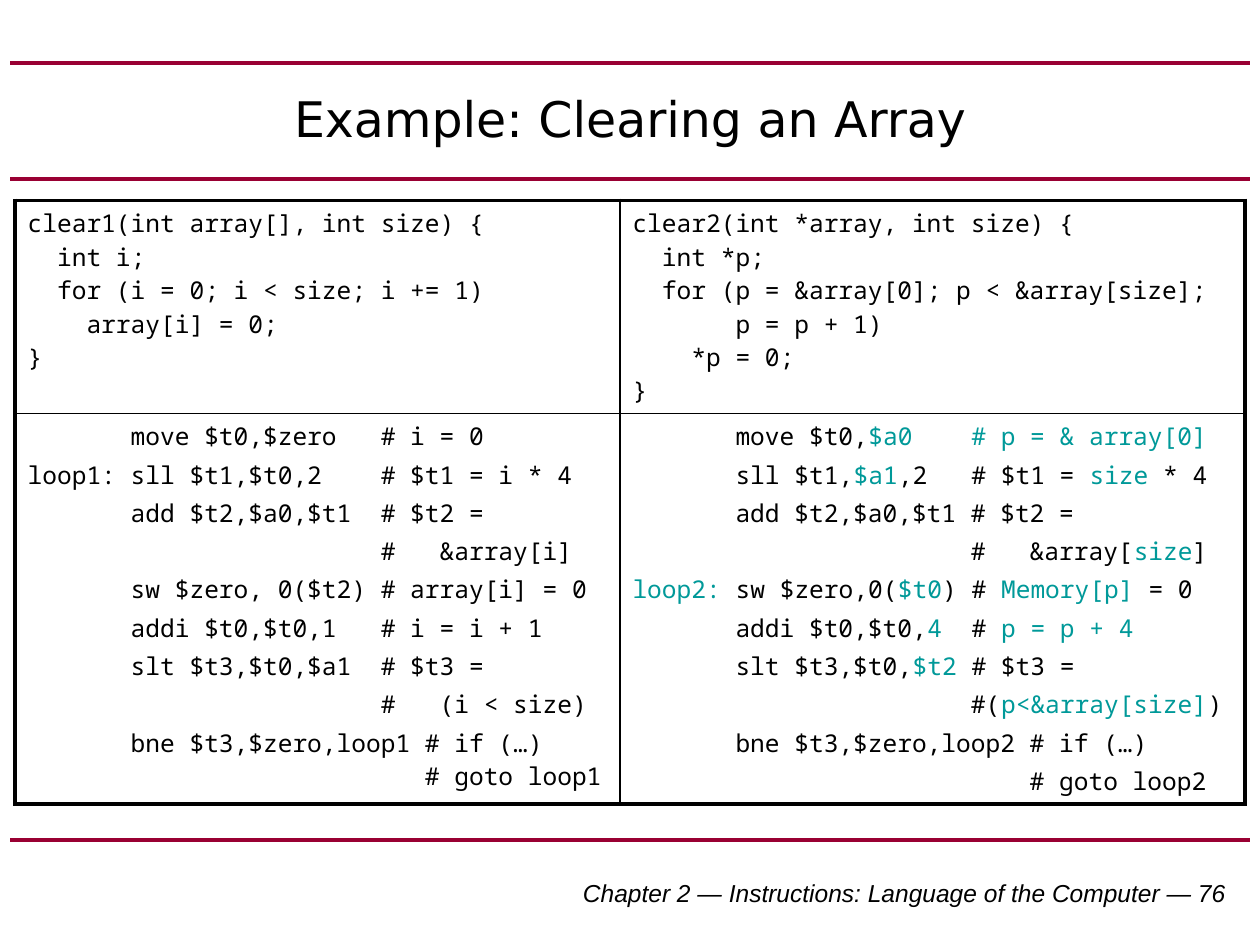
from dataclasses import dataclass

from lxml.etree import SubElement
from pptx import Presentation
from pptx.dml.color import RGBColor
from pptx.enum.shapes import MSO_CONNECTOR as Connector
from pptx.enum.text import MSO_ANCHOR as Anchor, PP_ALIGN as Align
from pptx.oxml.ns import qn
from pptx.util import Inches, Pt

BLACK = RGBColor(0x00, 0x00, 0x00)
WHITE = RGBColor(0xFF, 0xFF, 0xFF)
CRIMSON = RGBColor(0x99, 0x00, 0x33)
TEAL = RGBColor(0x00, 0x99, 0x99)

THICK, THIN = Pt(2.25), Pt(1)
MARK = "`"
BREAK = "\v"
CODE_FORMAT = {"name": "Noto Sans Mono", "size": Pt(14)}
RULE_HEIGHTS = (0.5, 1.42, 6.67)
COLUMN_WIDTHS = (4.8, 4.96)
ROW_HEIGHTS = (1.69, 3.1)


@dataclass(frozen=True)
class Label:
    text: str
    left: float
    top: float
    width: float
    height: float
    align: Align
    font: dict


@dataclass(frozen=True)
class Listing:
    lines: tuple[str, ...]
    gap: float = 0


LABELS = (
    Label("Chapter 2 — Instructions: Language of the Computer — 76",
          3.75, 6.92, 6.08, 0.33, Align.RIGHT,
          {"name": "Arial", "size": Pt(14), "italic": True}),
    Label("Example: Clearing an Array", 0.5, 0.5, 9, 0.87, Align.CENTER,
          {"name": "DejaVu Sans", "size": Pt(28)}),
)

LISTINGS = (
    (
        Listing((
            "clear1(int array[], int size) {",
            "  int i;",
            "  for (i = 0; i < size; i += 1)",
            "    array[i] = 0;",
            "}",
        )),
        Listing((
            "clear2(int *array, int size) {",
            "  int *p;",
            "  for (p = &array[0]; p < &array[size];",
            "       p = p + 1)",
            "    *p = 0;",
            "}",
        )),
    ),
    (
        Listing((
            "       move $t0,$zero   # i = 0",
            "loop1: sll $t1,$t0,2    # $t1 = i * 4",
            "       add $t2,$a0,$t1  # $t2 =",
            "                        #   &array[i]",
            "       sw $zero, 0($t2) # array[i] = 0",
            "       addi $t0,$t0,1   # i = i + 1",
            "       slt $t3,$t0,$a1  # $t3 =",
            "                        #   (i < size)",
            "       bne $t3,$zero,loop1 # if (…)" + BREAK
            + "                           # goto loop1",
        ), gap=2.8),
        Listing((
            "       move $t0,`$a0    # p = & array[0]`",
            "       sll $t1,`$a1`,2   # $t1 = `size` * 4",
            "       add $t2,$a0,$t1 # $t2 =",
            "                       #   &array[`size`]",
            "`loop2: `sw $zero,0(`$t0`) # `Memory[p]` = 0",
            "       addi $t0,$t0,`4`  # `p = p + 4`",
            "       slt $t3,$t0,`$t2` # $t3 =",
            "                       #(`p<&array[size]`)",
            "       bne $t3,$zero,loop2 # if (…)",
            "                           # goto loop2",
        ), gap=2.8),
    ),
)


def add_span(para, text: str, values: dict, color: RGBColor) -> None:
    span = para.add_run()
    span.text = text
    for name, value in values.items():
        setattr(span.font, name, value)
    span.font.color.rgb = color


def add_rule(page, top: float) -> None:
    rule = page.shapes.add_connector(
        Connector.STRAIGHT, Inches(0.08), Inches(top), Inches(9.92), Inches(top))
    rule.line.color.rgb = CRIMSON
    rule.line.width = THICK
    SubElement(rule.element.spPr, qn("a:effectLst"))


def add_label(page, label: Label) -> None:
    box = page.shapes.add_textbox(
        Inches(label.left), Inches(label.top), Inches(label.width), Inches(label.height))
    frame = box.text_frame
    frame.word_wrap = True
    frame.vertical_anchor = Anchor.MIDDLE
    para = frame.paragraphs[0]
    para.alignment = label.align
    add_span(para, label.text, label.font, BLACK)


def add_border(cell, side: str, width: int) -> None:
    line = SubElement(cell._tc.get_or_add_tcPr(), qn(f"a:ln{side}"), w=str(int(width)))
    fill = SubElement(line, qn("a:solidFill"))
    SubElement(fill, qn("a:srgbClr"), val=str(BLACK))


def write_listing(cell, listing: Listing) -> None:
    frame = cell.text_frame
    for number, line in enumerate(listing.lines):
        para = frame.add_paragraph() if number else frame.paragraphs[0]
        if number and listing.gap:
            para.space_before = Pt(listing.gap)
        for part, row in enumerate(line.split(BREAK)):
            if part:
                para.add_line_break()
            for index, text in enumerate(row.split(MARK)):
                if text:
                    add_span(para, text, CODE_FORMAT, TEAL if index % 2 else BLACK)


def add_code_table(page) -> None:
    table = page.shapes.add_table(
        len(ROW_HEIGHTS), len(COLUMN_WIDTHS), Inches(0.12), Inches(1.59),
        Inches(sum(COLUMN_WIDTHS)), Inches(sum(ROW_HEIGHTS))).table
    table.first_row = table.horz_banding = False
    for column, width in zip(table.columns, COLUMN_WIDTHS):
        column.width = Inches(width)
    for row, height in zip(table.rows, ROW_HEIGHTS):
        row.height = Inches(height)
    last_row, last_column = len(ROW_HEIGHTS) - 1, len(COLUMN_WIDTHS) - 1
    for y, listings in enumerate(LISTINGS):
        for x, listing in enumerate(listings):
            cell = table.cell(y, x)
            outer = {"L": x == 0, "R": x == last_column, "T": y == 0, "B": y == last_row}
            for side, is_outer in outer.items():
                add_border(cell, side, THICK if is_outer else THIN)
            cell.fill.solid()
            cell.fill.fore_color.rgb = WHITE
            write_listing(cell, listing)


def main() -> None:
    deck = Presentation()
    deck.slide_width, deck.slide_height = Inches(10), Inches(7.5)
    page = deck.slides.add_slide(deck.slide_layouts[6])
    for top in RULE_HEIGHTS:
        add_rule(page, top)
    for label in LABELS:
        add_label(page, label)
    add_code_table(page)
    deck.save("out.pptx")


if __name__ == "__main__":
    main()
